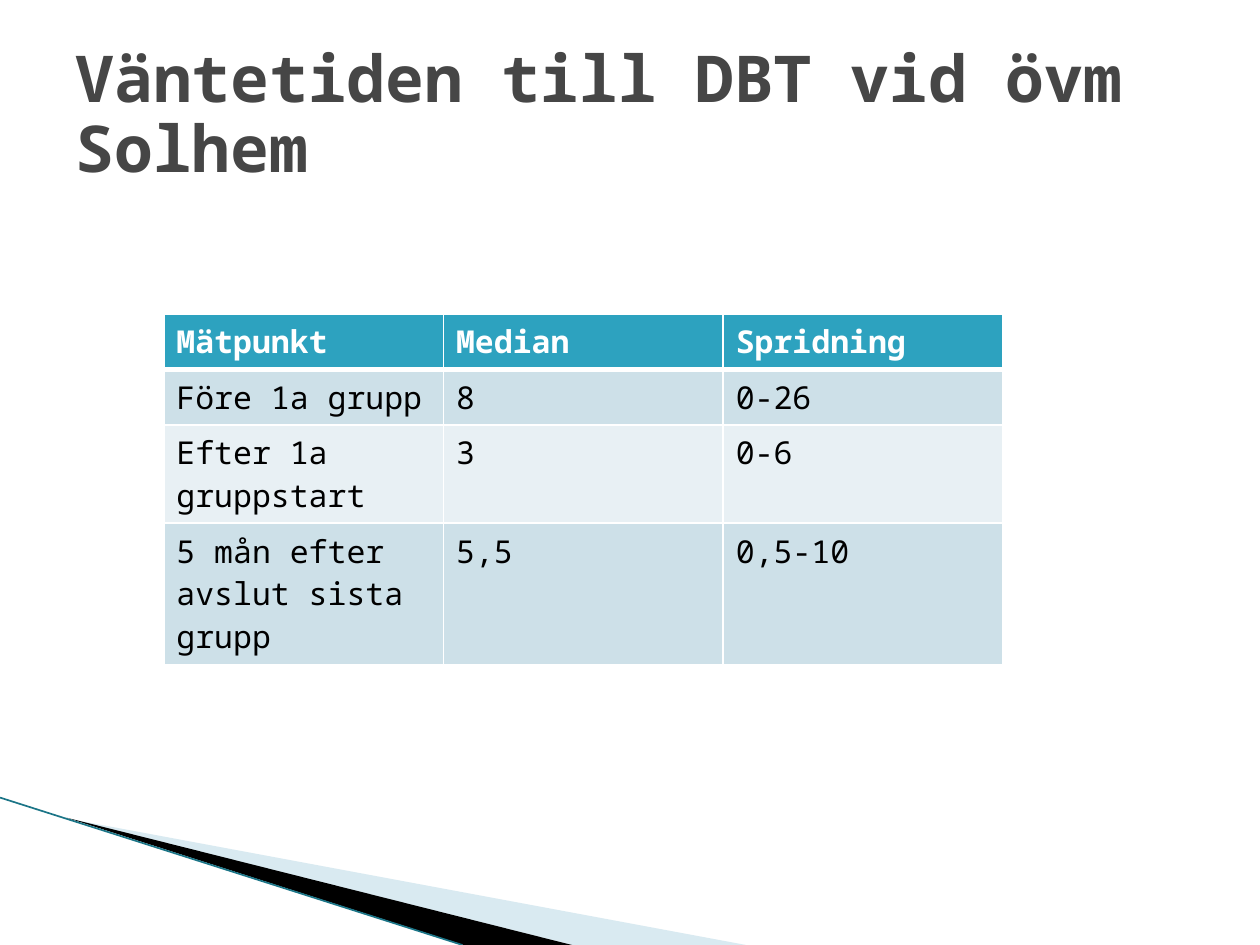
from lxml.etree import SubElement
from pptx import Presentation
from pptx.dml.color import RGBColor
from pptx.enum.shapes import MSO_CONNECTOR
from pptx.enum.text import MSO_ANCHOR, MSO_AUTO_SIZE, PP_ALIGN
from pptx.oxml.ns import qn
from pptx.util import Inches, Pt

FONT = "Noto Sans Mono"
COLORS = {
    "title": "464646",
    "text": "000000",
    "white": "FFFFFF",
    "header": "2DA2BF",
    "odd_row": "CDE0E8",
    "even_row": "E8F0F4",
    "light_wedge": "A0CBDC",
    "dark_wedge": "000000",
    "edge": "1B7587",
}


def rgb(name):
    return RGBColor.from_string(COLORS[name])


class SlideBuilder:
    def __init__(self, slide):
        self.slide = slide

    def add_text(self, frame, text, size, color, bold=False):
        paragraph = frame.paragraphs[0]
        paragraph.alignment = PP_ALIGN.LEFT
        run = paragraph.add_run()
        run.text = text
        run.font.name = FONT
        run.font.size = Pt(size)
        run.font.bold = bold
        run.font.color.rgb = rgb(color)
        return paragraph

    def title(self, text, left, top, width, height):
        heading = self.slide.shapes.title
        heading.left, heading.top = Inches(left), Inches(top)
        heading.width, heading.height = Inches(width), Inches(height)
        frame = heading.text_frame
        frame.word_wrap = True
        frame.auto_size = MSO_AUTO_SIZE.NONE
        frame.vertical_anchor = MSO_ANCHOR.MIDDLE
        self.add_text(frame, text, 36.9, "title", bold=True).line_spacing = 0.9

    def wedge(self, points, color, opacity=100):
        start, *rest = [(Inches(x), Inches(y)) for x, y in points]
        builder = self.slide.shapes.build_freeform(*start)
        builder.add_line_segments(rest, close=True)
        wedge = builder.convert_to_shape()
        wedge.shadow.inherit = False
        wedge.line.fill.background()
        wedge.fill.solid()
        wedge.fill.fore_color.rgb = rgb(color)
        if opacity < 100:
            fill_color = wedge._element.spPr.find(qn("a:solidFill"))[0]
            SubElement(fill_color, qn("a:alpha"), val=str(opacity * 1000))

    def line(self, start, end, color, width):
        edge = self.slide.shapes.add_connector(
            MSO_CONNECTOR.STRAIGHT, *map(Inches, start + end))
        edge.line.color.rgb = rgb(color)
        edge.line.width = Pt(width)
        SubElement(edge._element.spPr, qn("a:effectLst"))

    def border(self, cell, widths):
        properties = cell._tc.get_or_add_tcPr()
        for position, (side, width) in enumerate(widths.items()):
            line = SubElement(properties, qn(f"a:{side}"), w=str(Pt(width)))
            fill = SubElement(line, qn("a:solidFill"))
            SubElement(fill, qn("a:srgbClr"), val=COLORS["white"])
            properties.insert(position, line)

    def table(self, rows, left, top, column_width, row_height):
        columns = len(rows[0])
        table = self.slide.shapes.add_table(
            len(rows), columns, Inches(left), Inches(top),
            Inches(column_width * columns), Inches(row_height * len(rows))).table
        for r, row in enumerate(rows):
            is_header = r == 0
            fill = "header" if is_header else "odd_row" if r % 2 else "even_row"
            widths = {"lnL": 1, "lnR": 1, "lnT": 3 if r == 1 else 1,
                      "lnB": 3 if is_header else 1}
            for c, text in enumerate(row):
                cell = table.cell(r, c)
                cell.fill.solid()
                cell.fill.fore_color.rgb = rgb(fill)
                self.border(cell, widths)
                self.add_text(cell.text_frame, text, 18,
                              "white" if is_header else "text", is_header)


def main():
    presentation = Presentation()
    presentation.slide_width = Inches(10)
    presentation.slide_height = Inches(7.5)
    title_only = presentation.slide_layouts[5]
    builder = SlideBuilder(presentation.slides.add_slide(title_only))

    # Corner decoration
    builder.wedge([(0.55, 6.5), (5.92, 7.5), (4.54, 7.5)], "light_wedge", 40)
    builder.wedge([(0.53, 6.49), (4.54, 7.5), (3.68, 7.5)], "dark_wedge")
    builder.line((0, 6.33), (3.67, 7.5), "edge", 0.95)

    # Title
    builder.title("Väntetiden till DBT vid övm Solhem", 0.5, 0.3, 9, 1.25)

    # Waiting times
    waiting_times = [
        ("Mätpunkt", "Median", "Spridning"),
        ("Före 1a grupp", "8", "0-26"),
        ("Efter 1a gruppstart", "3", "0-6"),
        ("5 mån efter avslut sista grupp", "5,5", "0,5-10"),
    ]
    builder.table(waiting_times, 1.3, 2.49, 2.22, 0.41)

    presentation.save("out.pptx")


if __name__ == "__main__":
    main()
